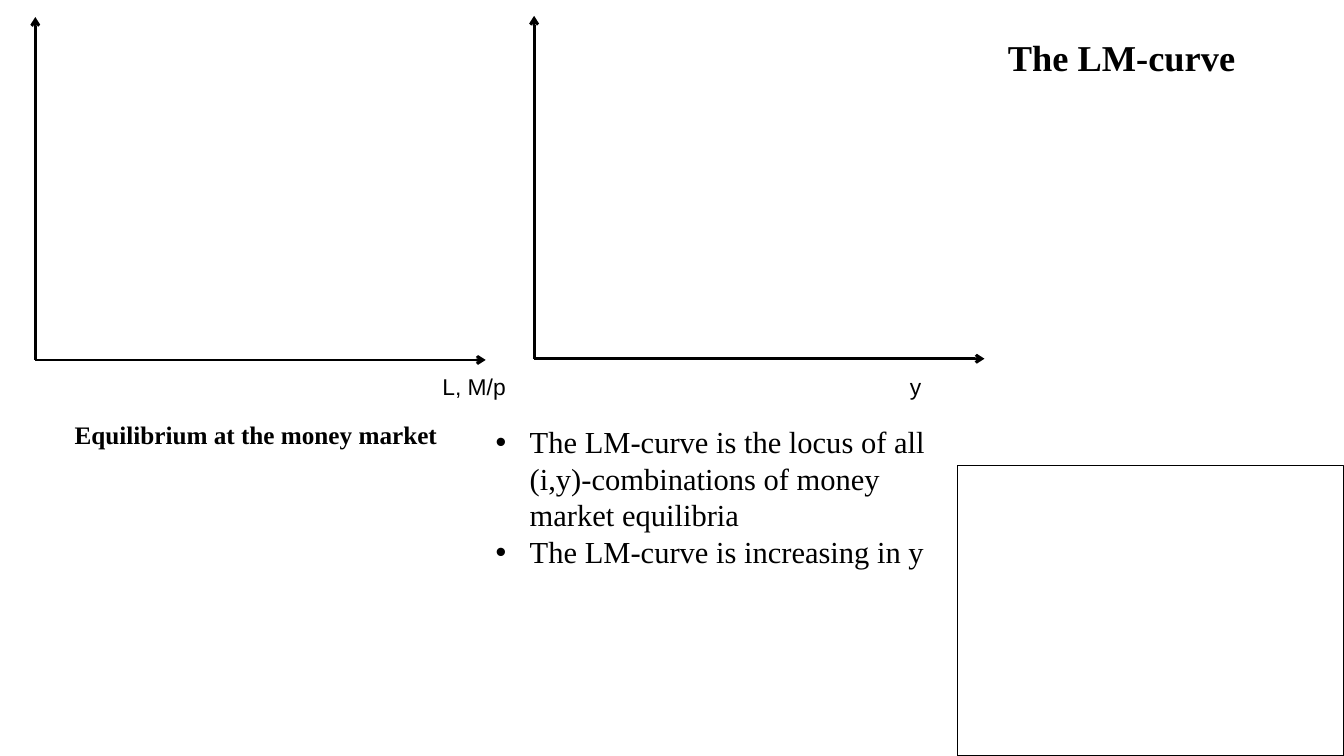
from pptx import Presentation
from pptx.dml.color import RGBColor
from pptx.enum.shapes import MSO_CONNECTOR as Connector, MSO_SHAPE as Shape
from pptx.enum.text import MSO_ANCHOR as Anchor, MSO_AUTO_SIZE as AutoSize, PP_ALIGN as Align
from pptx.oxml.ns import qn
from pptx.util import Cm, Pt
from lxml.etree import SubElement

BLACK = RGBColor(0x00, 0x00, 0x00)
SERIF = "Times New Roman"
SANS = "Arial"
AXIS_WIDTH, AXIS_HEIGHT = 11.35, 8.64
BULLET_INDENT = 0.86


class SlideBuilder:
    """Draws on one page; all positions and lengths are in centimetres."""

    def __init__(self, page):
        self.page = page

    def text(self, lines, left, top, width, height, size, font=SERIF, bold=False,
             wrap=True, align=Align.LEFT, anchor=Anchor.TOP):
        box = self.page.shapes.add_textbox(Cm(left), Cm(top), Cm(width), Cm(height))
        frame = box.text_frame
        frame.text = "\n".join(lines)
        frame.word_wrap = wrap
        frame.auto_size = AutoSize.NONE if wrap else AutoSize.SHAPE_TO_FIT_TEXT
        frame.vertical_anchor = anchor
        for para in frame.paragraphs:
            para.alignment = align
            for span in para.runs:
                span.font.name = font
                span.font.size = Pt(size)
                span.font.bold = bold
                span.font.color.rgb = BLACK
        return frame

    def bullets(self, lines, left, top, width, height, size):
        frame = self.text(lines, left, top, width, height, size)
        for para in frame.paragraphs:
            properties = para._p.get_or_add_pPr()
            properties.set("marL", str(Cm(BULLET_INDENT)))
            properties.set("indent", str(-Cm(BULLET_INDENT)))
            SubElement(properties, qn("a:buFont"), typeface=SANS)
            SubElement(properties, qn("a:buChar"), char="•")

    def arrow(self, start_x, start_y, end_x, end_y):
        arrow = self.page.shapes.add_connector(
            Connector.STRAIGHT, Cm(start_x), Cm(start_y), Cm(end_x), Cm(end_y))
        arrow.line.color.rgb = BLACK
        arrow.line.width = Pt(2)
        SubElement(arrow.line._get_or_add_ln(), qn("a:tailEnd"), type="arrow")
        SubElement(arrow._element.spPr, qn("a:effectLst"))

    def axes(self, origin_x, origin_y):
        self.arrow(origin_x, origin_y, origin_x + AXIS_WIDTH, origin_y)
        self.arrow(origin_x, origin_y, origin_x, origin_y - AXIS_HEIGHT)

    def frame(self, left, top, width, height):
        """Draw an empty outlined rectangle."""
        box = self.page.shapes.add_shape(
            Shape.RECTANGLE, Cm(left), Cm(top), Cm(width), Cm(height))
        box.shadow.inherit = False
        box.fill.background()
        box.line.color.rgb = BLACK
        box.line.width = Pt(1)


def main():
    deck = Presentation()
    deck.slide_width, deck.slide_height = Cm(33.87), Cm(19.05)
    builder = SlideBuilder(deck.slides.add_slide(deck.slide_layouts[6]))

    builder.text(["The LM-curve"], 22.68, 0.08, 11.18, 2.69, 26, bold=True,
                 align=Align.CENTER, anchor=Anchor.MIDDLE)
    builder.axes(0.89, 9.07)
    builder.text(["L, M/p"], 10.9, 9.27, 2.13, 0.97, 16.3, font=SANS, wrap=False)
    builder.axes(13.46, 9.04)
    builder.frame(24.13, 11.73, 9.73, 7.32)
    builder.text(["y"], 22.68, 9.27, 0.81, 0.97, 16.3, font=SANS, wrap=False)
    builder.bullets(
        ["The LM-curve is the locus of all (i,y)-combinations of money market equilibria",
         "The LM-curve is increasing in y"],
        12.24, 10.54, 11.71, 4.01, 21.8)
    builder.text(["Equilibrium at the money market"], 1.63, 10.44, 9.73, 1.02, 18,
                 bold=True, wrap=False)

    deck.save("out.pptx")


if __name__ == "__main__":
    main()
